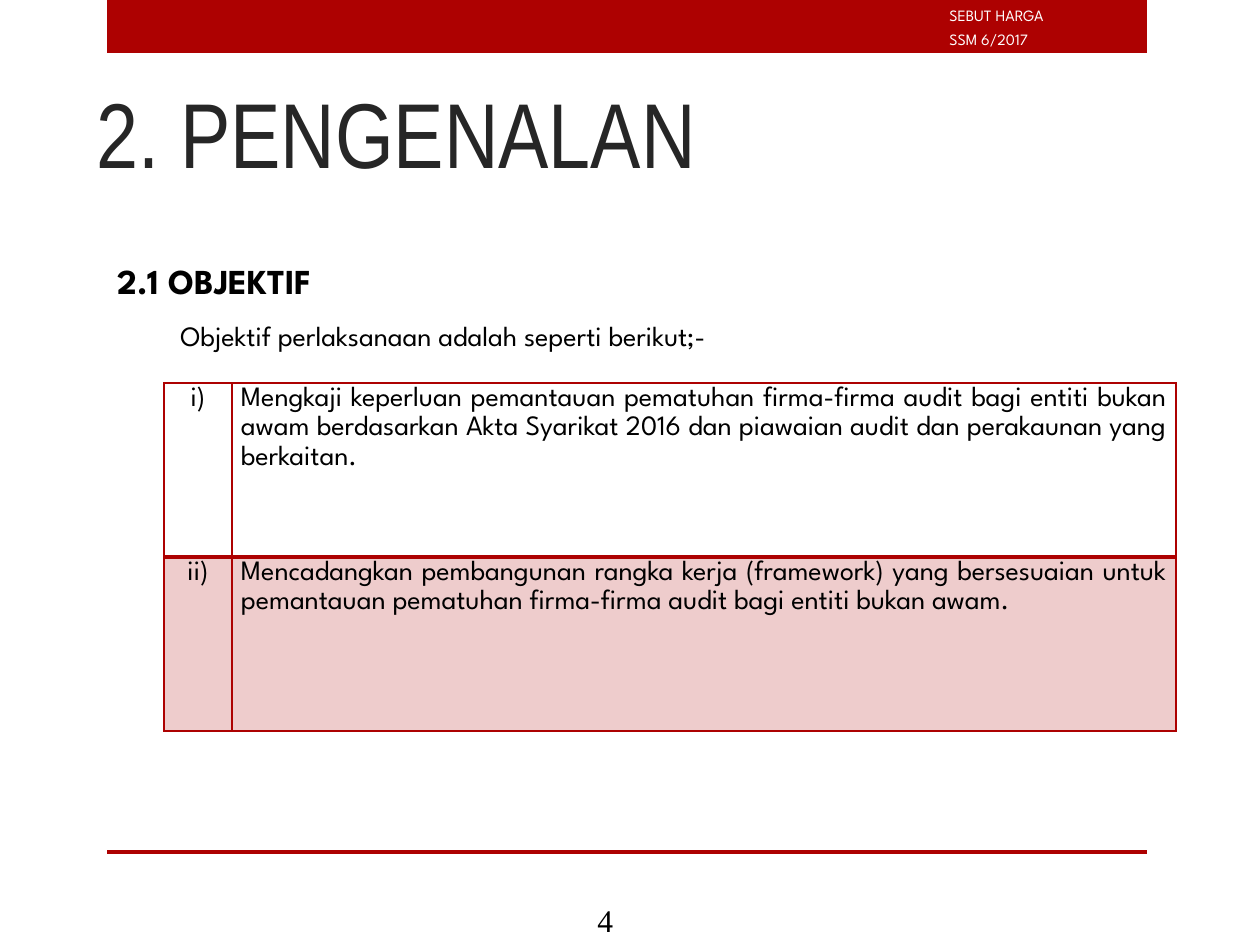
"""Build the objectives slide with its red bands, headings and two-row table."""
from lxml import etree
from pptx import Presentation
from pptx.dml.color import RGBColor
from pptx.enum.shapes import MSO_SHAPE
from pptx.enum.text import MSO_ANCHOR, PP_ALIGN
from pptx.oxml.ns import qn
from pptx.util import Pt

RECT = MSO_SHAPE.RECTANGLE
TOP, MIDDLE = MSO_ANCHOR.TOP, MSO_ANCHOR.MIDDLE
LEFT, CENTER, JUSTIFY = PP_ALIGN.LEFT, PP_ALIGN.CENTER, PP_ALIGN.JUSTIFY
EMU_PER_PX = 914400 / 126
RED, BLACK, DARK, WHITE = "AD0101", "000000", "262626", "FFFFFF"
SPARTAN, NARROW, TIMES = "League Spartan", "Arial Narrow", "Times New Roman"


def px(n):
    return round(n * EMU_PER_PX)


def color(value):
    return RGBColor.from_string(value)


class Deck:
    def __init__(self, prs):
        self.prs = prs
        self.s = prs.slides.add_slide(prs.slide_layouts[6])

    def bar(self, *box):
        sp = self.s.shapes.add_shape(RECT, *map(px, box))
        sp.shadow.inherit = False
        sp.fill.solid()
        sp.fill.fore_color.rgb = color(RED)
        sp.line.fill.background()

    def fill_text(self, tf, paragraphs, font=SPARTAN, ink=BLACK, **formats):
        for i, runs in enumerate(paragraphs):
            p = tf.add_paragraph() if i else tf.paragraphs[0]
            for name, value in formats.items():
                setattr(p, name, value)
            for text, size, bold in runs:
                r = p.add_run()
                r.text = text
                r.font.color.rgb = color(ink)
                for name, value in {"name": font, "size": Pt(size), "bold": bold}.items():
                    setattr(r.font, name, value)

    def text(self, box, paragraphs, anchor=TOP, inset=6, **style):
        tf = self.s.shapes.add_textbox(*map(px, box)).text_frame
        for name, value in {"word_wrap": True, "vertical_anchor": anchor,
                            "margin_top": px(inset), "margin_bottom": px(inset)}.items():
            setattr(tf, name, value)
        self.fill_text(tf, paragraphs, **style)

    def border(self, cell, widths):
        pr = cell._tc.get_or_add_tcPr()
        for i, (side, width) in enumerate(widths.items()):
            ln = etree.Element(qn(f"a:{side}"), w=str(Pt(width)))
            fill = etree.SubElement(ln, qn("a:solidFill"))
            etree.SubElement(fill, qn("a:srgbClr"), val=RED)
            pr.insert(i, ln)

    def shade(self, cell, alpha):
        if not alpha:
            cell.fill.background()
            return
        cell.fill.solid()
        cell.fill.fore_color.rgb = color(RED)
        clr = cell._tc.tcPr.find(f".//{qn('a:srgbClr')}")
        etree.SubElement(clr, qn("a:alpha"), val=str(alpha * 1000))

    def table(self, left, top, widths, height, rows):
        frame = self.s.shapes.add_table(len(rows), len(widths), px(left), px(top),
                                        px(sum(widths)), px(height * len(rows)))
        table = frame.table
        table.first_row = table.horz_banding = False
        for column, width in zip(table.columns, widths):
            column.width = px(width)
        for i, row in enumerate(rows):
            table.rows[i].height = px(height)
            edges = {"lnL": 1, "lnR": 1, "lnT": 2 if i else 1,
                     "lnB": 2 if i < len(rows) - 1 else 1}
            for j, value in enumerate(row):
                cell = table.cell(i, j)
                for name, margin in {"margin_left": 9, "margin_right": 9,
                                     "margin_top": 0, "margin_bottom": 0}.items():
                    setattr(cell, name, px(margin))
                self.shade(cell, 20 * (i % 2))
                self.border(cell, edges)
                self.fill_text(cell.text_frame, [[(value, 16, False)]], line_spacing=1.15,
                               alignment=JUSTIFY if j else CENTER)


def main():
    prs = Presentation()
    prs.slide_width, prs.slide_height = px(1260), px(945)
    deck = Deck(prs)
    deck.bar(107, 0, 1040, 53)
    deck.bar(107, 850, 1040, 4)
    deck.text((937, 0, 255, 50), [[("SEBUT HARGA", 9, False)], [("SSM 6/2017", 9, False)]],
              ink=WHITE, space_before=Pt(2.5))
    deck.text((585, 895, 105, 50), [[("4", 18, False)]], font=TIMES, alignment=LEFT)
    deck.text((84, 76, 935, 220), [[("2.\t PENGENALAN", 52.6, False)]], inset=0,
              font=NARROW, ink=DARK)
    deck.table(164, 383, (68, 944), 174, [
        ("i)", "Mengkaji keperluan pemantauan pematuhan firma-firma audit bagi entiti bukan "
               "awam berdasarkan Akta Syarikat 2016 dan piawaian audit dan perakaunan yang "
               "berkaitan."),
        ("ii)", "Mencadangkan pembangunan rangka kerja (framework) yang bersesuaian untuk "
                "pemantauan pematuhan firma-firma audit bagi entiti bukan awam."),
    ])
    deck.text((105, 258, 1131, 97), [
        [("2.1 OBJEKTIF", 20, True)],
        [("\t", 20, False), ("Objektif perlaksanaan adalah seperti berikut;-", 16, False)],
    ], anchor=MIDDLE, space_before=Pt(6))
    prs.save("out.pptx")


if __name__ == "__main__":
    main()
